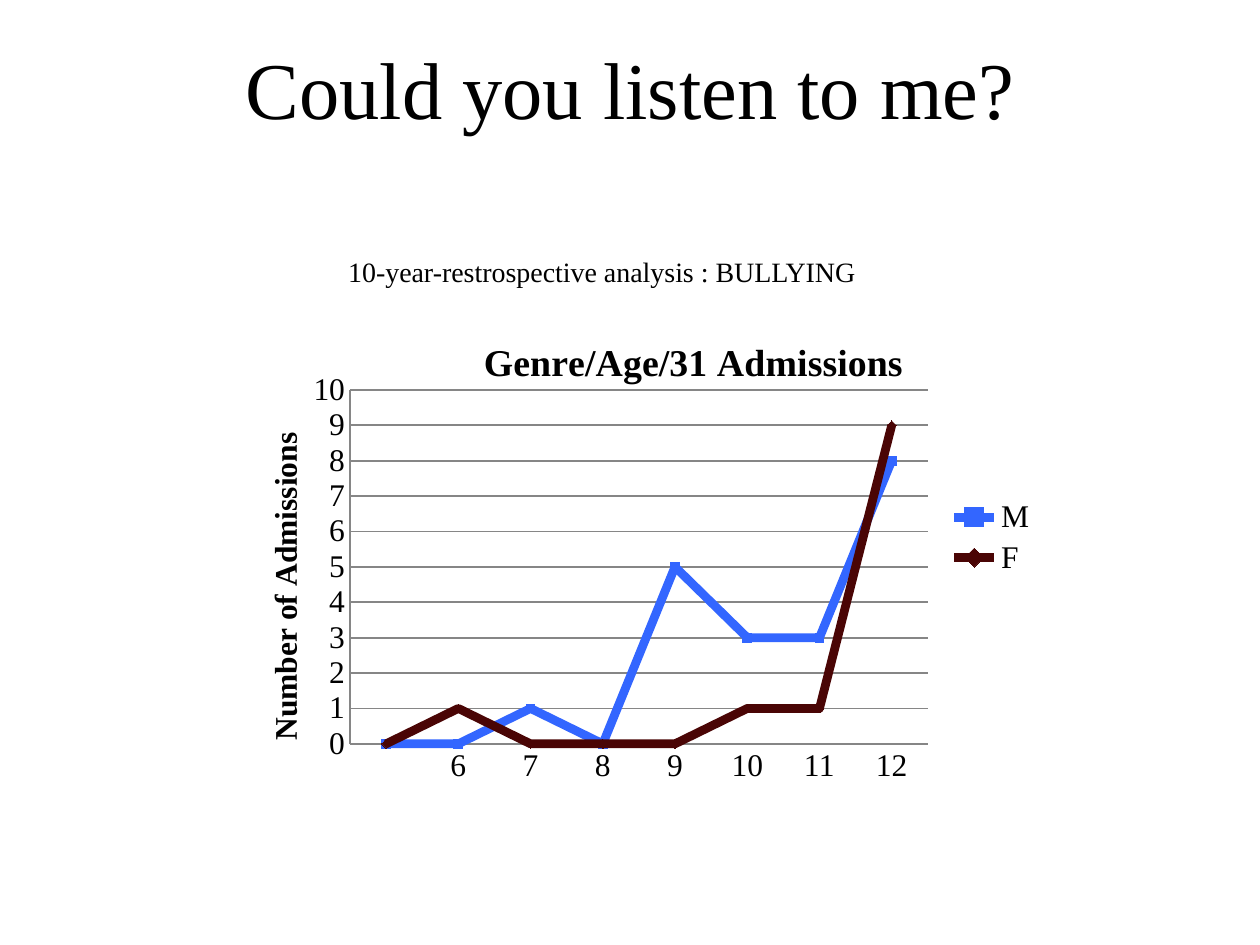
from lxml import etree
from pptx import Presentation, util as u
from pptx.chart.data import CategoryChartData
from pptx.dml.color import RGBColor
from pptx.enum import chart as ch, text as tx
from pptx.oxml.ns import qn

PX = u.Inches(1) // 126
FONT = "Times New Roman"
HUES = {"ink": "000000", "grid": "868686", "M": "3366FF", "F": "4A0505"}
AGES = ["", "6", "7", "8", "9", "10", "11", "12"]
DATA = {"M": [0, 0, 1, 0, 5, 3, 3, 8], "F": [0, 1, 0, 0, 0, 1, 1, 9]}
MARKS = {"M": ch.XL_MARKER_STYLE.SQUARE, "F": ch.XL_MARKER_STYLE.DIAMOND}


def hue(name):
    return RGBColor.from_string(HUES[name])


def style(font, size, bold=False):
    font.name, font.size, font.bold = FONT, u.Pt(size), bold
    font.color.rgb = hue("ink")


def write(frame, words, size, bold=False):
    frame.text = words
    para = frame.paragraphs[0]
    para.alignment = tx.PP_ALIGN.CENTER
    style(para.runs[0].font, size, bold)


def fit(frame):
    frame.word_wrap = True
    frame.auto_size = tx.MSO_AUTO_SIZE.NONE
    frame.vertical_anchor = tx.MSO_ANCHOR.MIDDLE
    frame.margin_top = frame.margin_bottom = 0


def place(node, index, box, **spots):
    """Set a manual layout from px offsets within the chart's box."""
    for old in node.findall(qn("c:layout")):
        node.remove(old)
    layout = etree.Element(qn("c:layout"))
    node.insert(index, layout)
    manual = etree.SubElement(layout, qn("c:manualLayout"))
    rules = {"xMode": "edge", "yMode": "edge"}
    if "w" in spots:
        rules = {"layoutTarget": "inner", **rules}
    for key, px in spots.items():
        rules[key] = round(px / box[2 if key in "xw" else 3], 4)
    for key, val in rules.items():
        etree.SubElement(manual, qn("c:" + key)).set("val", str(val))


def head(slide, box):
    title = slide.shapes.title
    title.left, title.top, title.width, title.height = (n * PX for n in box)
    fit(title.text_frame)
    write(title.text_frame, "Could you listen to me?", 46)


def note(slide, box):
    frame = slide.shapes.add_textbox(*(n * PX for n in box)).text_frame
    fit(frame)
    write(frame, "10-year-restrospective analysis : BULLYING", 16)


def trim(axis):
    axis.major_tick_mark = axis.minor_tick_mark = ch.XL_TICK_MARK.NONE
    axis.format.line.color.rgb = hue("grid")
    axis.format.line.width = u.Pt(1)
    style(axis.tick_labels.font, 18)


def graph(slide, box):
    data = CategoryChartData()
    data.categories = AGES
    for name, vals in DATA.items():
        data.add_series(name, vals)
    chart = slide.shapes.add_chart(
        ch.XL_CHART_TYPE.LINE_MARKERS, *(n * PX for n in box), data).chart
    style(chart.font, 18)

    chart.has_title = True
    write(chart.chart_title.text_frame, "Genre/Age/31 Admissions", 21.6, True)
    place(chart.chart_title.element, 1, box, x=249, y=50)
    plot = chart.element.find(".//" + qn("c:plotArea"))
    place(plot, 0, box, x=122, y=109, w=578, h=354)

    axis = chart.value_axis
    axis.minimum_scale, axis.maximum_scale, axis.major_unit = 0, 10, 1
    axis.major_gridlines.format.line.color.rgb = hue("grid")
    axis.major_gridlines.format.line.width = u.Pt(1)
    axis.has_title = True
    write(axis.axis_title.text_frame, "Number of Admissions", 18, True)
    place(axis.axis_title.element, 1, box, x=32, y=146)
    trim(axis)
    trim(chart.category_axis)

    chart.has_legend = True
    chart.legend.position = ch.XL_LEGEND_POSITION.RIGHT
    chart.legend.include_in_layout = False
    style(chart.legend.font, 18)

    chart.plots[0].vary_by_categories = False
    for line in chart.plots[0].series:
        line.smooth = False
        line.format.line.color.rgb = hue(line.name)
        line.format.line.width = u.Pt(5)
        mark = line.marker
        mark.style, mark.size = MARKS[line.name], 5
        mark.format.fill.solid()
        mark.format.fill.fore_color.rgb = hue(line.name)
        mark.format.line.color.rgb = hue(line.name)


def main():
    deck = Presentation()
    deck.slide_width, deck.slide_height = 1260 * PX, 945 * PX
    slide = deck.slides.add_slide(deck.slide_layouts[5])
    head(slide, (126, 40, 1008, 94))
    note(slide, (98, 253, 1008, 36))
    graph(slide, (228, 281, 822, 513))
    deck.save("out.pptx")


if __name__ == "__main__":
    main()
